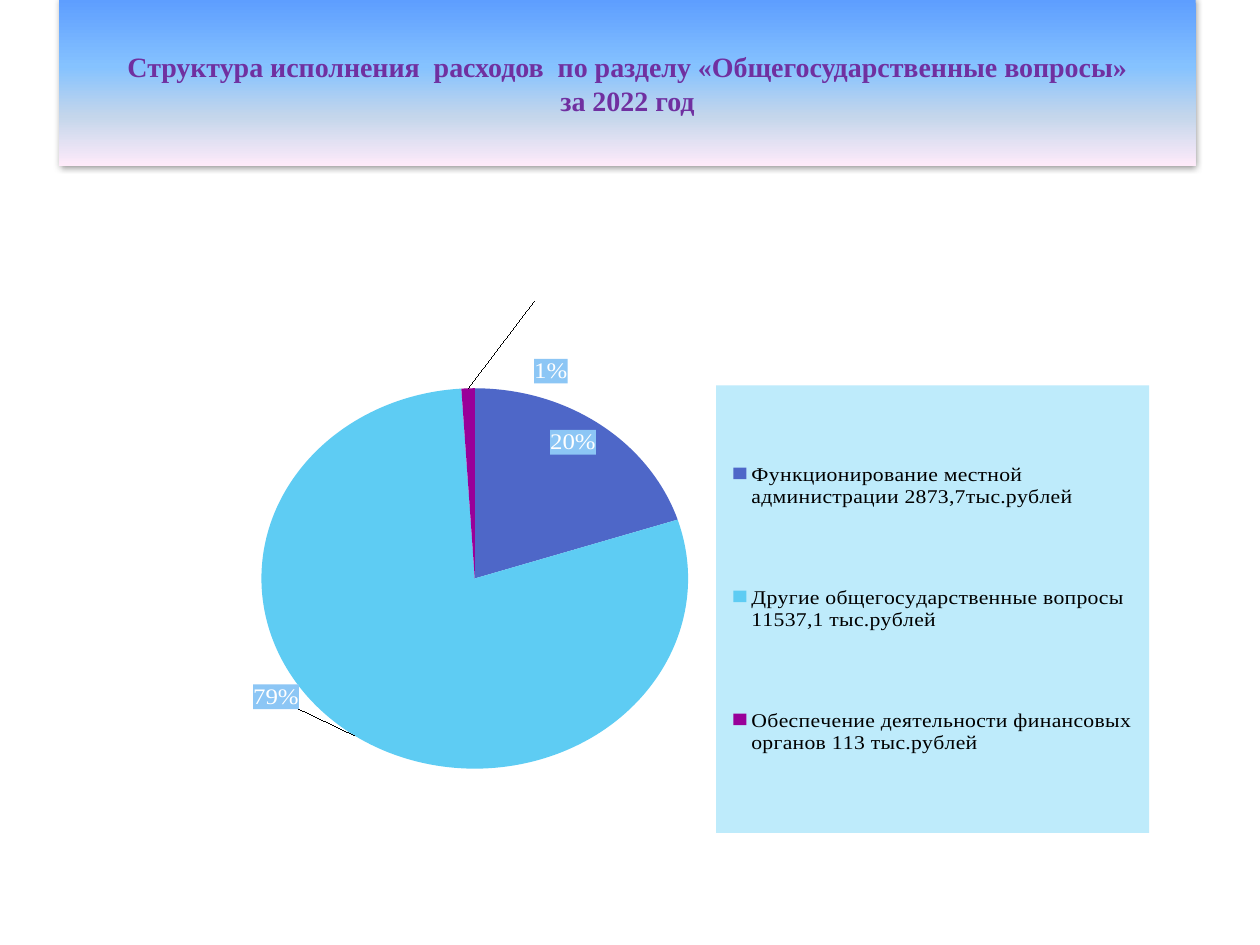
from lxml.etree import SubElement
from pptx import Presentation
from pptx.chart.data import CategoryChartData
from pptx.dml.color import RGBColor
from pptx.enum.chart import XL_CHART_TYPE as ChartType
from pptx.enum.chart import XL_LABEL_POSITION as LabelPos
from pptx.enum.chart import XL_LEGEND_POSITION as LegendPos
from pptx.enum.text import MSO_ANCHOR, PP_ALIGN
from pptx.oxml import parse_xml
from pptx.oxml.ns import nsdecls, qn
from pptx.util import Inches, Pt

# Content
TITLE = [
    "Структура исполнения  расходов  по разделу «Общегосударственные вопросы»",
    "за 2022 год",
]
SERIF = "Times New Roman"
PURPLE = RGBColor(0x70, 0x30, 0xA0)
WHITE = RGBColor(0xFF, 0xFF, 0xFF)
BLACK = RGBColor(0, 0, 0)
LABEL_FILL = RGBColor(0x8C, 0xC6, 0xF5)
LEGEND_FILL = RGBColor(0xBE, 0xEB, 0xFB)
BANNER_STOPS = [(0, "5E9EFF"), (40, "85C2FF"), (70, "C4D6EB"), (100, "FFEBFA")]

# Category, share, colour, label position, label shift (parts of the chart)
EXPENSES = [
    ("Функционирование местной администрации 2873,7тыс.рублей", 20,
     RGBColor(0x4E, 0x67, 0xC8), LabelPos.INSIDE_END, None),
    ("Другие общегосударственные вопросы 11537,1 тыс.рублей", 79,
     RGBColor(0x5E, 0xCC, 0xF3), LabelPos.OUTSIDE_END, (-0.05, -0.12)),
    ("Обеспечение деятельности финансовых органов 113 тыс.рублей", 1,
     RGBColor(0x99, 0x00, 0x99), LabelPos.OUTSIDE_END, (0.08, -0.17)),
]
PLOT_AREA = (0.145, 0.062, 0.411, 0.803)
LEGEND_AREA = (0.583, 0.056, 0.417, 0.944)


def layout_xml(values, edge=True, inner=False):
    """Manual layout of a chart part: x, y and optionally width, height."""
    target = '<c:layoutTarget val="inner"/>' if inner else ""
    modes = '<c:xMode val="edge"/><c:yMode val="edge"/>' if edge else ""
    sizes = "".join(f'<c:{tag} val="{v}"/>' for tag, v in zip("xywh", values))
    return parse_xml(f'<c:layout {nsdecls("c")}><c:manualLayout>{target}{modes}'
                     f'{sizes}</c:manualLayout></c:layout>')


def fill_xml(color):
    return parse_xml(f'<c:spPr {nsdecls("c", "a")}><a:solidFill>'
                     f'<a:srgbClr val="{color}"/></a:solidFill></c:spPr>')


def drop(parent, tag):
    for child in parent.findall(qn(tag)):
        parent.remove(child)


def style_font(font, size, color):
    font.name, font.size, font.color.rgb = SERIF, Pt(size), color


prs = Presentation()
prs.slide_width, prs.slide_height = Inches(10), Inches(7.5)
slide = prs.slides.add_slide(prs.slide_layouts[5])

# Pie chart
data = CategoryChartData()
data.categories = [expense[0] for expense in EXPENSES]
data.add_series("Series 1", [expense[1] for expense in EXPENSES])
chart = slide.shapes.add_chart(
    ChartType.PIE, Inches(0.88), Inches(2.39), Inches(8.24), Inches(4.22), data
).chart
chart.has_title = False
chart.font.name, chart.font.size = "Calibri", Pt(16)
chart.font.color.rgb = BLACK
plot = chart.plots[0]
plot.vary_by_categories = True
shares = plot.series[0]
plot_area = chart._chartSpace.chart.plotArea
drop(plot_area, "c:layout")
plot_area.insert(0, layout_xml(PLOT_AREA, inner=True))

# Percent labels with leader lines
labels = shares.data_labels
labels.show_value, labels.show_percentage = False, True
style_font(labels.font, 14.2, WHITE)
for i, (_, _, color, position, shift) in enumerate(EXPENSES):
    point = shares.points[i]
    point.format.fill.solid()
    point.format.fill.fore_color.rgb = color
    label = point.data_label
    label.position = position
    style_font(label.font, 14.2, WHITE)
    node = labels._element.findall(qn("c:dLbl"))[i]
    node.find(qn("c:showVal")).set("val", "0")
    node.find(qn("c:showPercent")).set("val", "1")
    drop(node, "c:spPr")
    node.find(qn("c:txPr")).addprevious(fill_xml(LABEL_FILL))
    if shift:
        drop(node, "c:layout")
        node.find(qn("c:idx")).addnext(layout_xml(shift, edge=False))
drop(labels._element, "c:showLeaderLines")
SubElement(labels._element, qn("c:showLeaderLines")).set("val", "1")

# Legend
chart.has_legend = True
legend = chart.legend
legend.position = LegendPos.RIGHT
legend.include_in_layout = False
style_font(legend.font, 12.4, BLACK)
drop(legend._element, "c:layout")
legend._element.find(qn("c:overlay")).addprevious(layout_xml(LEGEND_AREA))
legend._element.find(qn("c:txPr")).addprevious(fill_xml(LEGEND_FILL))

# Title banner
banner = slide.shapes.title
banner.left, banner.top = Inches(0.47), Inches(0)
banner.width, banner.height = Inches(9.02), Inches(1.32)
stops = "".join(f'<a:gs pos="{pos * 1000}"><a:srgbClr val="{rgb}"/></a:gs>'
                for pos, rgb in BANNER_STOPS)
banner_style = [
    f'<a:prstGeom {nsdecls("a")} prst="rect"><a:avLst/></a:prstGeom>',
    f'<a:gradFill {nsdecls("a")} rotWithShape="1"><a:gsLst>{stops}</a:gsLst>'
    '<a:lin ang="5400000" scaled="0"/></a:gradFill>',
    f'<a:effectLst {nsdecls("a")}><a:outerShdw blurRad="50800" dist="0" '
    'dir="5400000" rotWithShape="0"><a:srgbClr val="000000">'
    '<a:alpha val="43000"/></a:srgbClr></a:outerShdw></a:effectLst>',
]
for xml in banner_style:
    banner._element.spPr.append(parse_xml(xml))
frame = banner.text_frame
frame.word_wrap = True
frame.vertical_anchor = MSO_ANCHOR.MIDDLE
frame.text = "\n".join(TITLE)
for paragraph in frame.paragraphs:
    paragraph.alignment = PP_ALIGN.CENTER
    style_font(paragraph.font, 16, PURPLE)
    paragraph.font.bold = True

prs.save("out.pptx")
